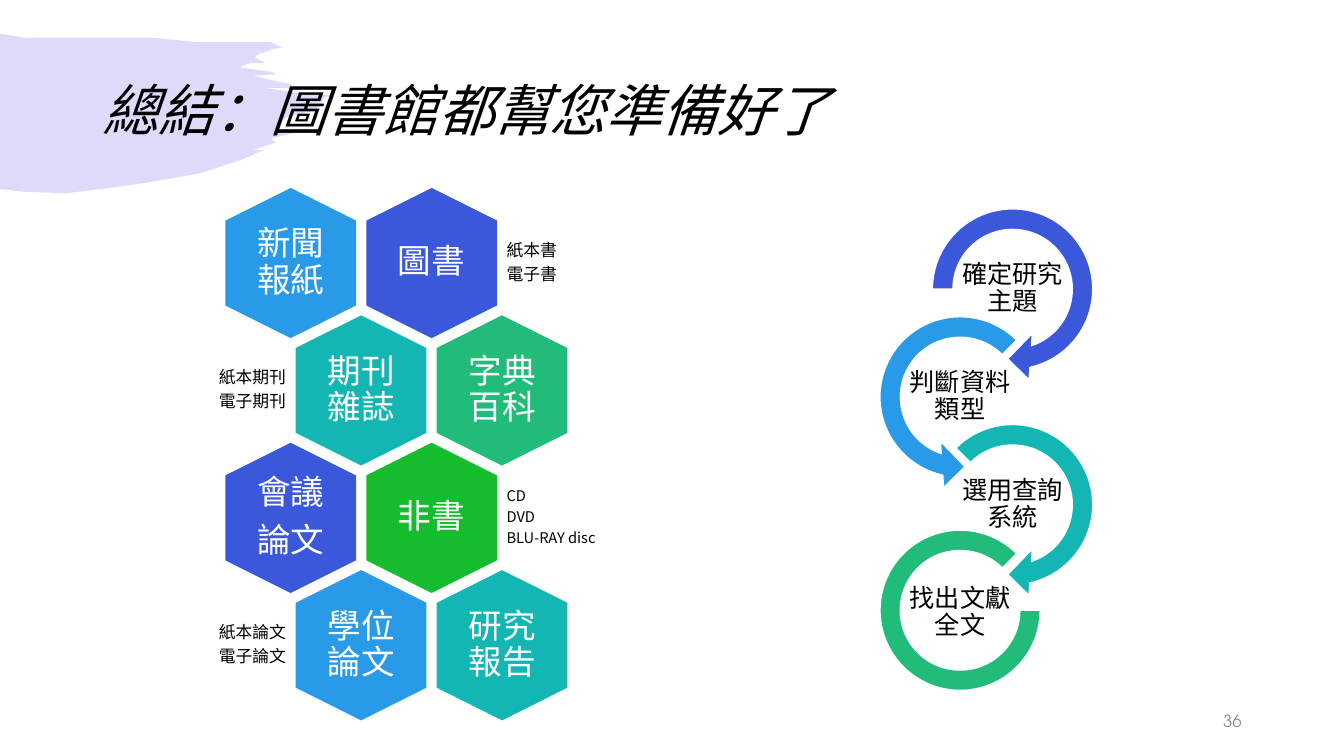
"""Build the summary slide: a honeycomb of library materials and a four-step search cycle."""
import lxml.etree
import pptx
import pptx.dml.color
import pptx.enum.shapes
import pptx.enum.text
import pptx.oxml.ns
import pptx.util

Pt = pptx.util.Pt
SHAPES = pptx.enum.shapes.MSO_SHAPE
ALIGN = pptx.enum.text.PP_ALIGN
qn = pptx.oxml.ns.qn

FONT = "Noto Sans CJK SC"
TITLE = "總結：圖書館都幫您準備好了"
PAGE_NUMBER = "36"
BLUE, SKY, TEAL, GREEN, LIME = "3B58DB", "299AE7", "14B6B4", "21BC79", "14BC2E"

HEXAGON_ROWS = [
    [(["新聞報紙"], SKY), (["圖書"], BLUE)],
    [(["期刊雜誌"], TEAL), (["字典百科"], GREEN)],
    [(["會議", "論文"], BLUE), (["非書"], LIME)],
    [(["學位論文"], SKY), (["研究報告"], TEAL)],
]
ROW_NOTES = [
    (["紙本書", "電子書"], 12),
    (["紙本期刊", "電子期刊"], 12),
    (["CD", "DVD", "BLU-RAY disc"], 10.5),
    (["紙本論文", "電子論文"], 12),
]
STEPS = [
    ("確定研究主題", BLUE, SHAPES.CIRCULAR_ARROW, 133.2, 0, [0.11, 11.42, 45, 108, 0.125]),
    ("判斷資料類型", SKY, SHAPES.LEFT_CIRCULAR_ARROW, 133.2, 0, [0.11, 11.42, 63, 189, 0.125]),
    ("選用查詢系統", TEAL, SHAPES.CIRCULAR_ARROW, 133.2, 0, [0.11, 11.42, 45, 135, 0.125]),
    ("找出文獻全文", GREEN, SHAPES.BLOCK_ARC, 114.5, -1.6, [0, 189, 0.127]),
]
BRUSH_INCHES = [
    (0, 0.34), (0.25, 0.37), (0.66, 0.38), (1.02, 0.37), (1.51, 0.38), (1.94, 0.41),
    (2.48, 0.41), (2.68, 0.42), (2.8, 0.47), (2.71, 0.49), (2.55, 0.54), (2.53, 0.57),
    (2.56, 0.59), (2.62, 0.62), (2.48, 0.62), (2.38, 0.66), (2.46, 0.68), (2.56, 0.7),
    (2.66, 0.71), (2.75, 0.74), (2.51, 0.75), (2.63, 0.78), (2.73, 0.81), (2.8, 0.82),
    (2.88, 0.83), (2.9, 0.85), (2.87, 0.88), (2.84, 0.88), (2.63, 0.88), (2.95, 0.92),
    (3.3, 0.94), (3.21, 0.97), (3.18, 1.06), (3.07, 1.11), (3, 1.13), (2.83, 1.16),
    (2.8, 1.2), (2.78, 1.25), (2.74, 1.28), (3.08, 1.28), (2.69, 1.38), (2.73, 1.42),
    (2.52, 1.48), (2.63, 1.48), (2.4, 1.59), (1.97, 1.72), (1.5, 1.81), (1.02, 1.88),
    (0.65, 1.91), (0.23, 1.9), (0, 1.88),
]


def color(value):
    return pptx.dml.color.RGBColor.from_string(value)


def paint(shape, fill, line=None):
    shape.shadow.inherit = False
    shape.fill.solid()
    shape.fill.fore_color.rgb = color(fill)
    if line:
        shape.line.color.rgb = color(line)
        shape.line.width = Pt(1)
    else:
        shape.line.fill.background()


def write(shape, lines, size, ink, align, inset=0.0, font=FONT, spacing=0.9, italic=False):
    frame = shape.text_frame
    frame.word_wrap = True
    frame.auto_size = pptx.enum.text.MSO_AUTO_SIZE.NONE
    frame.vertical_anchor = pptx.enum.text.MSO_ANCHOR.MIDDLE
    frame.margin_left = frame.margin_right = Pt(inset)
    frame.margin_top = frame.margin_bottom = Pt(inset / 2)
    frame.text = "\n".join(lines)
    for paragraph in frame.paragraphs:
        paragraph.alignment = align
        paragraph.line_spacing = spacing
        paragraph.space_before = Pt(0)
        paragraph.space_after = Pt(0.35 * size if len(lines) > 1 else 0)
        for run in paragraph.runs:
            run.font.size = Pt(size)
            run.font.name = font
            run.font.italic = italic
            run.font.color.rgb = color(ink)
            east_asian = lxml.etree.SubElement(run.font._element, qn("a:ea"))
            east_asian.set("typeface", font)


def add_centered(slide, kind, center_x, center_y, width, height):
    box = Pt(center_x - width / 2), Pt(center_y - height / 2), Pt(width), Pt(height)
    if kind is None:
        return slide.shapes.add_textbox(*box)
    return slide.shapes.add_shape(kind, *box)


def adjust(shape, values):
    for index, value in enumerate(values):
        shape.adjustments[index] = value


def add_brush(slide):
    points = [(x * 72, y * 72) for x, y in BRUSH_INCHES]
    builder = slide.shapes.build_freeform(*points[0], scale=Pt(1))
    builder.add_line_segments(points[1:], close=True)
    brush = builder.convert_to_shape()
    paint(brush, "6C45EA")
    fill_color = brush._element.spPr.find(qn("a:solidFill"))[0]
    lxml.etree.SubElement(fill_color, qn("a:alpha")).set("val", "20000")
    slide.shapes._spTree.insert(2, brush._element)


def add_honeycomb(slide):
    for row, (cells, (note, note_size)) in enumerate(zip(HEXAGON_ROWS, ROW_NOTES)):
        shifted = row % 2
        center_y = 187.9 + 91 * row
        first_x = 207.6 + 50.3 * shifted
        for column, (lines, fill) in enumerate(cells):
            center_x = first_x + 100.7 * column
            hexagon = add_centered(slide, SHAPES.HEXAGON, center_x, center_y, 107.3, 93.4)
            hexagon.rotation = 90
            adjust(hexagon, [0.25, 1.1547])
            paint(hexagon, fill)
            label = add_centered(slide, None, center_x, center_y, 64, 73.4)
            write(label, lines, 24, "FFFFFF", ALIGN.CENTER)
        note_x = first_x - 109 if shifted else first_x + 100.7 + 109
        note_box = add_centered(slide, None, note_x, center_y, 118, 64)
        write(note_box, note, note_size, "000000", ALIGN.RIGHT if shifted else ALIGN.LEFT, 3.6)


def add_cycle(slide):
    for index, (text, fill, kind, size, shift, values) in enumerate(STEPS):
        center_x = 685.8 if index % 2 else 723.3
        center_y = 206.5 + 77 * index
        ring = add_centered(slide, kind, center_x, center_y + shift, size, size)
        adjust(ring, values)
        paint(ring, fill, "FFFFFF")
        label = add_centered(slide, None, center_x, center_y, 74.2, 37.4)
        write(label, [text], 18, "000000", ALIGN.CENTER, 0.7)


def main():
    presentation = pptx.Presentation()
    presentation.slide_width, presentation.slide_height = Pt(960), Pt(540)
    slide = presentation.slides.add_slide(presentation.slide_layouts[5])
    title = slide.shapes.title
    title.left, title.top, title.width, title.height = Pt(66), Pt(28.8), Pt(828), Pt(104.4)
    write(title, [TITLE], 40, "000000", ALIGN.LEFT, 7.2, italic=True)
    add_brush(slide)
    add_honeycomb(slide)
    add_cycle(slide)
    number = slide.shapes.add_textbox(Pt(678), Pt(500.5), Pt(216), Pt(28.8))
    write(number, [PAGE_NUMBER], 12, "8C8C8C", ALIGN.RIGHT, 7.2, "TeX Gyre Adventor", 1.0)
    presentation.save("out.pptx")


if __name__ == "__main__":
    main()
